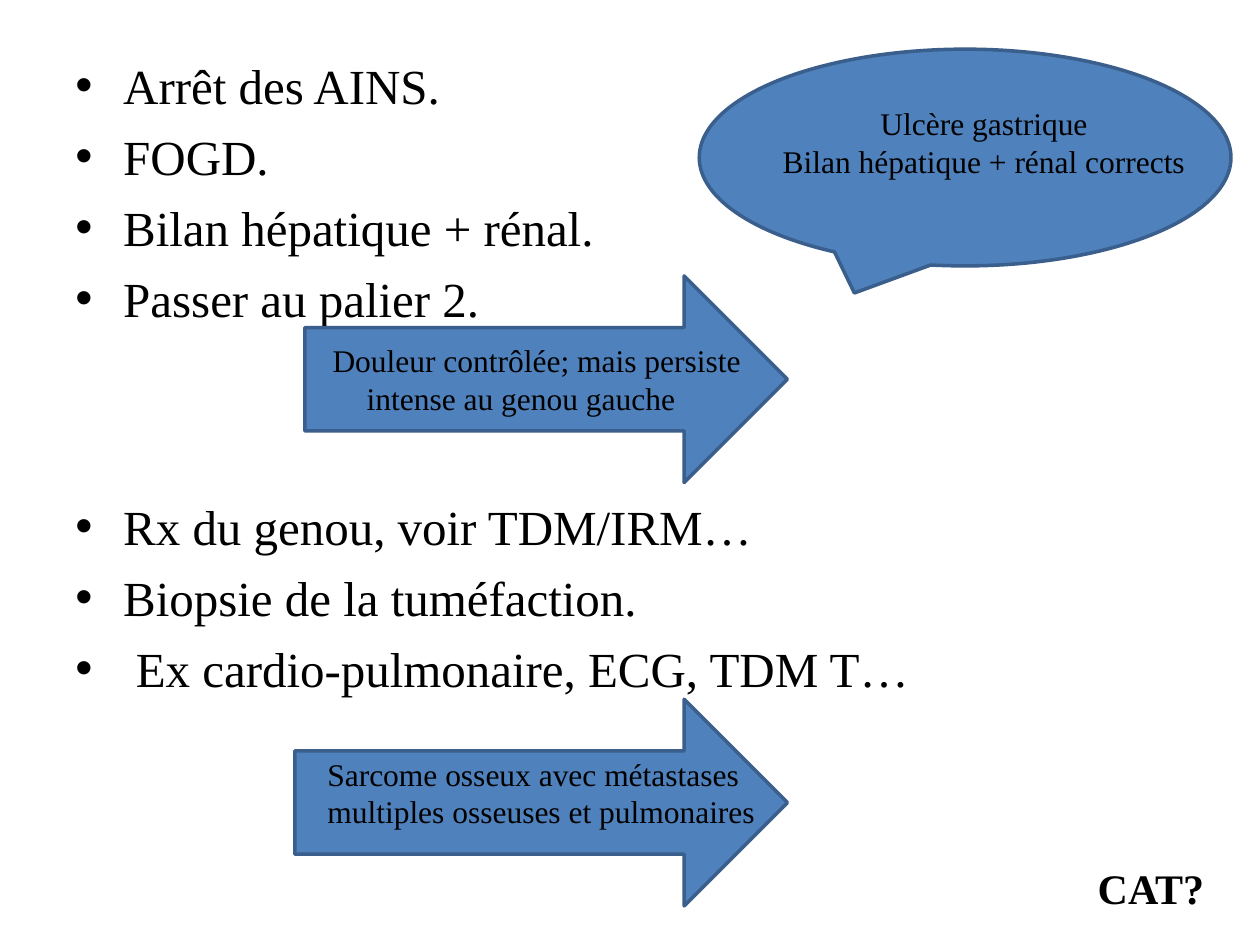
from lxml.etree import SubElement
from pptx import Presentation
from pptx.dml.color import RGBColor
from pptx.enum.shapes import MSO_SHAPE as Shape
from pptx.enum.text import PP_ALIGN as Align
from pptx.oxml.ns import qn
from pptx.util import Inches, Pt

BLACK, BLUE, DARK_BLUE = "000000", "4F81BD", "3A5F8C"
FONT = "Times New Roman"
HANGING = 0.38


def color(value):
    return RGBColor.from_string(value)


def add_text(slide, box, lines, size=18, bold=False, align=Align.CENTER):
    """Place one paragraph per line and return the paragraphs."""
    frame = slide.shapes.add_textbox(*map(Inches, box)).text_frame
    frame.word_wrap = True
    paragraphs = []
    for index, line in enumerate(lines):
        paragraph = frame.add_paragraph() if index else frame.paragraphs[0]
        paragraph.alignment = align
        run = paragraph.add_run()
        run.text = line
        run.font.name, run.font.size, run.font.bold = FONT, Pt(size), bold
        run.font.color.rgb = color(BLACK)
        paragraphs.append(paragraph)
    return paragraphs


def add_bullet(paragraph, hanging=HANGING):
    properties = paragraph._p.get_or_add_pPr()
    properties.set("marL", str(Inches(hanging)))
    properties.set("indent", str(-Inches(hanging)))
    SubElement(properties, qn("a:buFont"), typeface="Arial")
    SubElement(properties, qn("a:buChar"), char="•")


def add_blue_shape(slide, kind, box):
    shape = slide.shapes.add_shape(kind, *map(Inches, box))
    shape.shadow.inherit = False
    shape.fill.solid()
    shape.fill.fore_color.rgb = color(BLUE)
    shape.line.color.rgb = color(DARK_BLUE)
    shape.line.width = Pt(2)


def add_steps(slide, box):
    """Two groups of bullets, with room for an arrow between them."""
    before_arrow = ["Arrêt des AINS.", "FOGD.", "Bilan hépatique + rénal.",
                    "Passer au palier 2."]
    after_arrow = ["Rx du genou, voir TDM/IRM…", "Biopsie de la tuméfaction.",
                   "Ex cardio-pulmonaire, ECG, TDM T…"]
    steps = add_text(slide, box, before_arrow + after_arrow, size=28, align=Align.LEFT)
    for step in steps:
        step.space_before = Pt(7)
    steps[0].space_before = Pt(3)
    steps[len(before_arrow)].space_before = Pt(96.5)
    for step in steps[:-1]:
        add_bullet(step)
    add_bullet(steps[-1], hanging=HANGING + 0.1)


def add_callout(slide, box):
    left, top, width, _ = box
    add_blue_shape(slide, Shape.OVAL_CALLOUT, box)
    add_text(slide, (left + 0.54, top + 0.39, width - 0.78, 0.71),
             ["Ulcère gastrique", "Bilan hépatique + rénal corrects"])


def add_arrow(slide, box, label_box, lines, align):
    add_blue_shape(slide, Shape.RIGHT_ARROW, box)
    return add_text(slide, label_box, lines, align=align)


def build():
    deck = Presentation()
    deck.slide_width, deck.slide_height = Inches(10), Inches(7.5)
    slide = deck.slides.add_slide(deck.slide_layouts[6])

    # Management steps and test results
    add_steps(slide, (0.5, 0.39, 9, 6.31))
    add_callout(slide, (5.55, 0.39, 4.22, 1.72))

    # Outcome after each group of steps
    pain = add_arrow(slide, (2.42, 2.19, 3.83, 1.64), (2.5, 2.66, 3.52, 0.71),
                     ["Douleur contrôlée; mais persiste", "intense au genou gauche"],
                     Align.CENTER)
    pain[1]._p.get_or_add_pPr().set("marR", str(Inches(0.25)))
    add_arrow(slide, (2.34, 5.55, 3.91, 1.64), (2.5, 5.94, 3.83, 0.71),
              ["Sarcome osseux avec métastases multiples osseuses et pulmonaires"],
              Align.LEFT)

    # Closing question
    add_text(slide, (8.52, 6.8, 1.23, 0.5), ["CAT?"], size=24, bold=True)
    deck.save("out.pptx")


if __name__ == "__main__":
    build()
